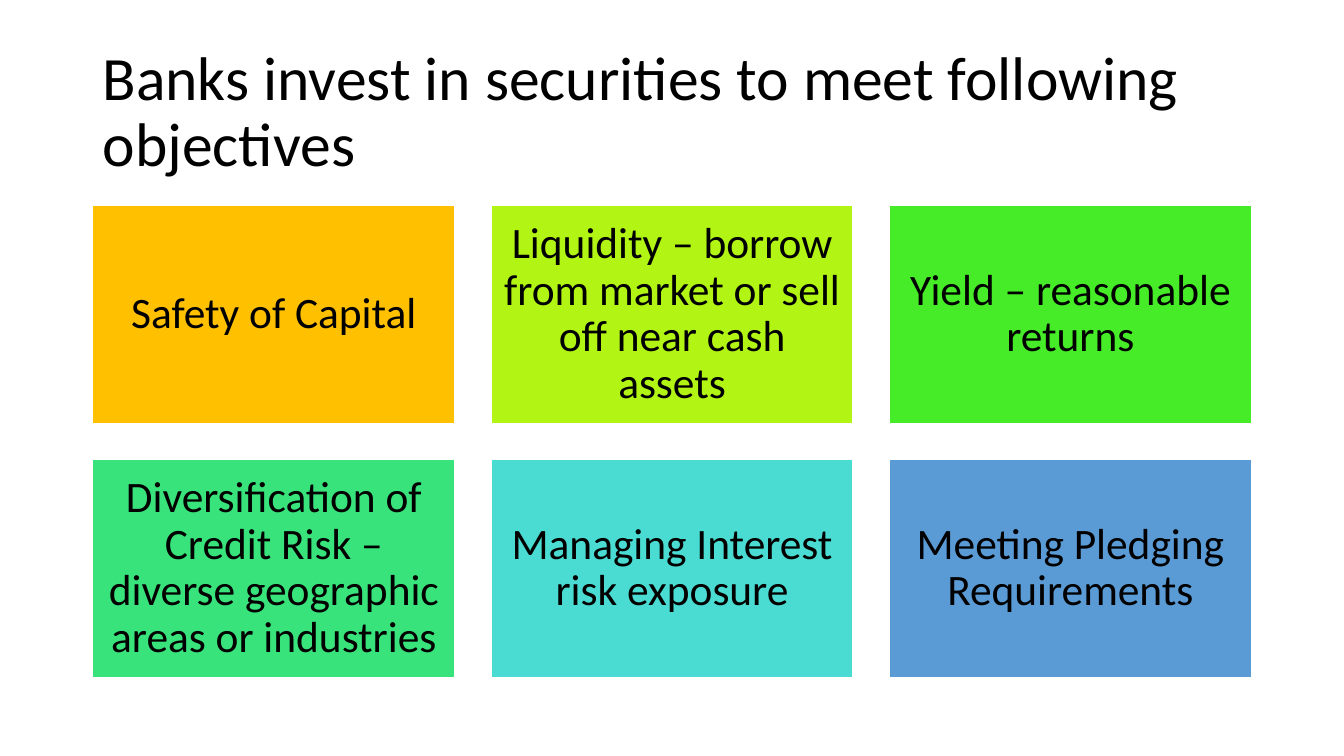
from pptx import Presentation
from pptx.dml.color import RGBColor as Rgb
from pptx.enum.shapes import MSO_SHAPE as Shape
from pptx.enum.text import MSO_ANCHOR as Anchor, PP_ALIGN as Align
from pptx.util import Inches, Pt

COLORS = {
    "ink": "000000",
    "white": "FFFFFF",
    "amber": "FFC000",
    "lime": "B2F514",
    "green": "46EC27",
    "mint": "39E37B",
    "aqua": "4ADCD2",
    "blue": "5B9BD5",
}

GOALS = [
    ("Safety of Capital", "amber"),
    ("Liquidity – borrow from market or sell off near cash assets", "lime"),
    ("Yield – reasonable returns", "green"),
    ("Diversification of Credit Risk – diverse geographic areas or industries", "mint"),
    ("Managing Interest risk exposure", "aqua"),
    ("Meeting Pledging Requirements", "blue"),
]


class Page:
    font = "Calibri"

    def __init__(self, slide):
        self.slide = slide

    def color(self, name):
        return Rgb.from_string(COLORS[name])

    def label(self, shape, text, size, align, pad_x, pad_y):
        frame = shape.text_frame
        frame.text = text
        frame.word_wrap = True
        frame.vertical_anchor = Anchor.MIDDLE
        frame.margin_left = frame.margin_right = Inches(pad_x)
        frame.margin_top = frame.margin_bottom = Inches(pad_y)
        for para in frame.paragraphs:
            para.alignment = align
            para.line_spacing = 0.9
            for run in para.runs:
                run.font.name = self.font
                run.font.size = Pt(size)
                run.font.color.rgb = self.color("ink")

    def title(self, text, *area):
        box = self.slide.shapes.add_textbox(*map(Inches, area))
        self.label(box, text, 44, Align.LEFT, 0.1, 0.05)

    def card(self, text, fill, *area):
        box = self.slide.shapes.add_shape(Shape.RECTANGLE, *map(Inches, area))
        box.shadow.inherit = False
        box.fill.solid()
        box.fill.fore_color.rgb = self.color(fill)
        box.line.color.rgb = self.color("white")
        box.line.width = Pt(1)
        self.label(box, text, 31, Align.CENTER, 0.13, 0.13)


def main():
    deck = Presentation()
    deck.slide_width = Inches(13.33)
    deck.slide_height = Inches(7.5)
    page = Page(deck.slides.add_slide(deck.slide_layouts[6]))

    left, top, wide, high, gap = 0.92, 2.04, 3.59, 2.16, 0.36
    page.title("Banks invest in securities to meet following objectives",
               left, 0.4, 11.5, 1.45)
    for i, (text, fill) in enumerate(GOALS):
        row, col = divmod(i, 3)
        page.card(text, fill, left + col * (wide + gap),
                  top + row * (high + gap), wide, high)

    deck.save("out.pptx")


if __name__ == "__main__":
    main()
